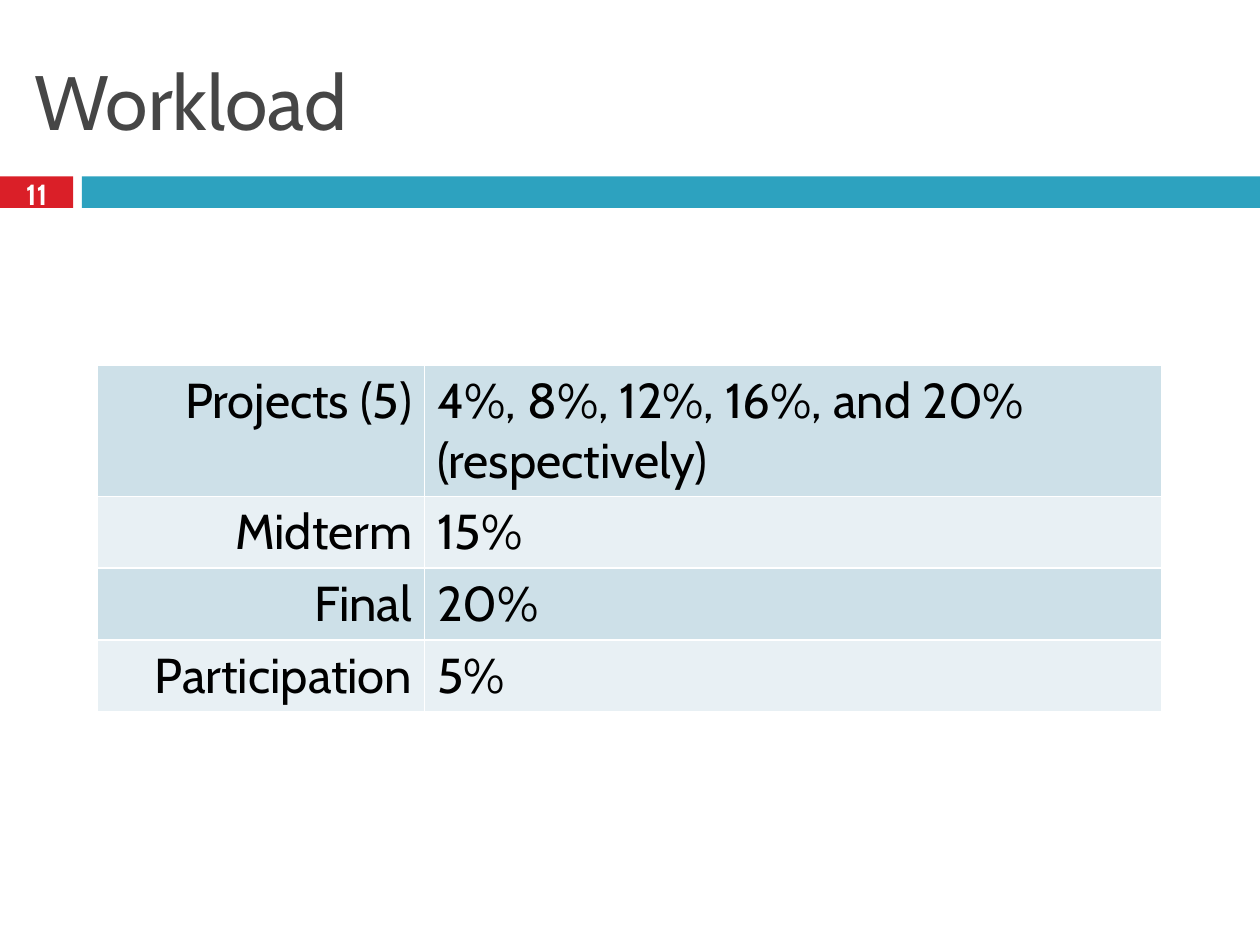
from dataclasses import dataclass

from lxml.etree import SubElement
from pptx import Presentation
from pptx.dml.color import RGBColor
from pptx.enum.shapes import MSO_SHAPE
from pptx.enum.text import MSO_ANCHOR as Anchor, PP_ALIGN as Align
from pptx.oxml.ns import qn
from pptx.util import Inches, Pt


@dataclass(frozen=True)
class Theme:
    font: str = "Cabin"
    title_color: str = "464646"
    text_color: str = "000000"
    white: str = "FFFFFF"
    red: str = "DA1F28"
    teal: str = "2DA2BF"
    bands: tuple = ("CDE0E8", "E8F0F4")
    title_size: float = 44
    number_size: float = 16.6
    table_size: float = 28


theme = Theme()


def write_text(text_frame, text, size, color, align=Align.LEFT, bold=False):
    text_frame.text = text
    paragraph = text_frame.paragraphs[0]
    paragraph.alignment = align
    font = paragraph.runs[0].font
    font.name, font.size, font.bold = theme.font, Pt(size), bold
    font.color.rgb = RGBColor.from_string(color)


def set_borders(cell, color, width):
    properties = cell._tc.get_or_add_tcPr()
    for position, side in enumerate(("lnL", "lnR", "lnT", "lnB")):
        line = SubElement(properties, qn(f"a:{side}"), w=str(Pt(width)))
        fill = SubElement(line, qn("a:solidFill"))
        SubElement(fill, qn("a:srgbClr"), val=color)
        properties.insert(position, line)  # borders come before the cell fill


presentation = Presentation()
presentation.slide_width = Inches(10)
presentation.slide_height = Inches(7.5)
slide = presentation.slides.add_slide(presentation.slide_layouts[5])

# Header bars
for left, width, color in ((0, 0.58, theme.red), (0.65, 9.35, theme.teal)):
    bar = slide.shapes.add_shape(
        MSO_SHAPE.RECTANGLE, Inches(left), Inches(1.4), Inches(width), Inches(0.25))
    bar.shadow.inherit = False
    bar.fill.solid()
    bar.fill.fore_color.rgb = RGBColor.from_string(color)
    bar.line.fill.background()

# Title
title = slide.shapes.title
title.left, title.top = Inches(0.17), Inches(0.25)
title.width, title.height = Inches(9.67), Inches(1.08)
title.text_frame.vertical_anchor = Anchor.MIDDLE
write_text(title.text_frame, "Workload", theme.title_size, theme.title_color)

# Slide number
number_box = slide.shapes.add_textbox(Inches(0), Inches(1.37), Inches(0.58), Inches(0.33))
number_frame = number_box.text_frame
number_frame.word_wrap = True
number_frame.vertical_anchor = Anchor.MIDDLE
number_frame.margin_left = number_frame.margin_right = Inches(0)
number_frame.margin_top = number_frame.margin_bottom = Inches(0)
write_text(number_frame, "11", theme.number_size, theme.white, Align.CENTER, bold=True)

# Grading table
workload = (
    ("Projects (5)", "4%, 8%, 12%, 16%, and 20% (respectively)"),
    ("Midterm", "15%"),
    ("Final", "20%"),
    ("Participation", "5%"),
)
column_widths = (2.6, 5.85)
row_heights = (1.04, 0.57, 0.57, 0.57)
table = slide.shapes.add_table(
    len(workload), len(column_widths), Inches(0.77), Inches(2.9),
    Inches(sum(column_widths)), Inches(sum(row_heights))).table
table.first_row = False
for column, width in zip(table.columns, column_widths):
    column.width = Inches(width)

for row_index, (row, height) in enumerate(zip(table.rows, row_heights)):
    row.height = Inches(height)
    band = theme.bands[row_index % 2]
    for cell, text, align in zip(row.cells, workload[row_index], (Align.RIGHT, Align.LEFT)):
        write_text(cell.text_frame, text, theme.table_size, theme.text_color, align)
        cell.fill.solid()
        cell.fill.fore_color.rgb = RGBColor.from_string(band)
        set_borders(cell, theme.white, 1)

presentation.save("out.pptx")
